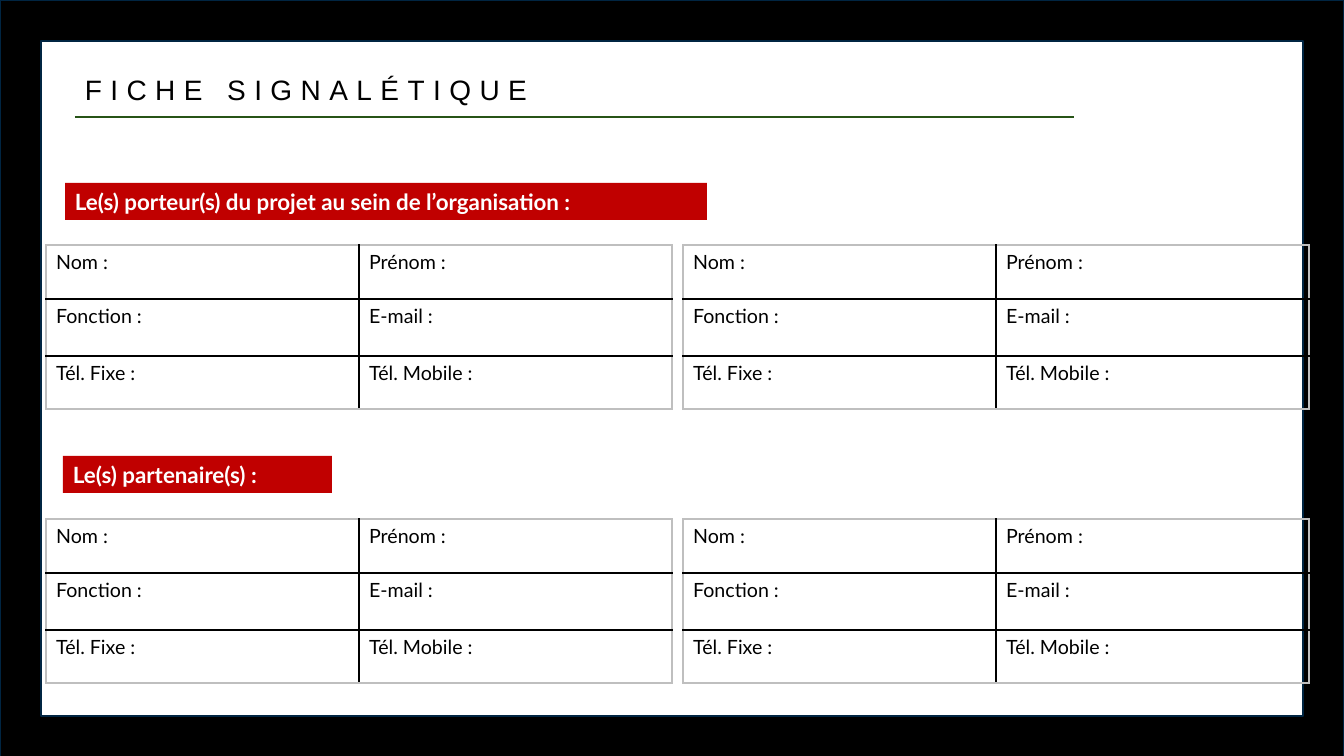
from lxml import etree
from pptx import Presentation
from pptx.dml.color import RGBColor
from pptx.enum.shapes import MSO_CONNECTOR, MSO_SHAPE
from pptx.enum.text import MSO_ANCHOR, MSO_AUTO_SIZE, PP_ALIGN
from pptx.oxml.ns import qn
from pptx.util import Pt

RECT, FRAME = MSO_SHAPE.RECTANGLE, MSO_SHAPE.FRAME
LINE = MSO_CONNECTOR.STRAIGHT
LEFT, CENTER = PP_ALIGN.LEFT, PP_ALIGN.CENTER
TOP = MSO_ANCHOR.TOP
GROW = MSO_AUTO_SIZE.SHAPE_TO_FIT_TEXT

BLACK = RGBColor(0x00, 0x00, 0x00)
WHITE = RGBColor(0xFF, 0xFF, 0xFF)
NAVY = RGBColor(0x00, 0x25, 0x42)
GREEN = RGBColor(0x27, 0x54, 0x17)
RED = RGBColor(0xC0, 0x00, 0x00)
GREY = RGBColor(0xBF, 0xBF, 0xBF)

WIDE, HIGH = 1344, 756
FIELDS = [
    ("Nom :", "Prénom :"),
    ("Fonction :", "E-mail :"),
    ("Tél. Fixe :", "Tél. Mobile :"),
]
ROWS = (54, 57, 53)
COL = 313
LEFTS = (46, 683)
PARTS = [
    ("Le(s) porteur(s) du projet au sein de l’organisation :", (65, 183, 642, 37), 245),
    ("Le(s) partenaire(s) :", (63, 456, 269, 37), 519),
]


def px(*nums):
    """Turn lengths in px into EMU."""
    return [round(n * 12192000 / WIDE) for n in nums]


def write(frame, text, size=14, face="Lato", color=BLACK, bold=False,
          align=LEFT, space=None, track=None):
    """Put formatted text in a text frame."""
    para = frame.paragraphs[0]
    para.alignment = align
    if space:
        para.line_spacing = space
    run = para.add_run()
    run.text = text
    font = run.font
    font.size, font.name, font.bold = Pt(size), face, bold
    font.color.rgb = color
    if track:
        run._r.get_or_add_rPr().set("spc", str(track * 100))


def add_box(slide, kind, box, fill):
    """Add a plain filled shape without a line."""
    shape = slide.shapes.add_shape(kind, *px(*box))
    shape.shadow.inherit = False
    shape.fill.solid()
    shape.fill.fore_color.rgb = fill
    shape.line.fill.background()
    return shape


def add_border(slide):
    """Add the black frame around the slide."""
    shape = add_box(slide, FRAME, (0, 0, WIDE, HIGH + 1), BLACK)
    shape.adjustments[0] = 0.054
    shape.line.color.rgb = NAVY
    shape.line.width = Pt(1.5)


def add_title(slide, text):
    """Add the spaced title and the rule under it."""
    frame = slide.shapes.add_textbox(*px(-222, 71, 1056, 91)).text_frame
    frame.word_wrap = True
    frame.vertical_anchor = TOP
    write(frame, text, size=20, face="Arial", align=CENTER, space=0.9, track=6)
    rule = slide.shapes.add_connector(LINE, *px(75, 117, 1074, 117))
    rule.line.color.rgb = GREEN
    rule.line.width = Pt(1.5)
    etree.SubElement(rule._element.spPr, qn("a:effectLst"))


def add_label(slide, text, box):
    """Add a red heading bar."""
    frame = add_box(slide, RECT, box, RED).text_frame
    frame.word_wrap = True
    frame.auto_size = GROW
    frame.vertical_anchor = TOP
    write(frame, text, size=16, color=WHITE, bold=True)


def set_edges(cell, edges):
    """Draw the cell borders, given as side and colour."""
    props = cell._tc.get_or_add_tcPr()
    for spot, (side, color) in enumerate(edges):
        line = etree.Element(qn("a:ln" + side), w=str(Pt(1)))
        fill = etree.SubElement(line, qn("a:solidFill"))
        etree.SubElement(fill, qn("a:srgbClr"), val=str(color))
        props.insert(spot, line)


def add_form(slide, left, top):
    """Add one contact table with grey outer and black inner borders."""
    rows, cols = len(FIELDS), len(FIELDS[0])
    shape = slide.shapes.add_table(rows, cols, *px(left, top, COL * cols, sum(ROWS)))
    table = shape.table
    table.first_row = table.horz_banding = False
    for col in table.columns:
        col.width = px(COL)[0]
    for r, names in enumerate(FIELDS):
        table.rows[r].height = px(ROWS[r])[0]
        for c, name in enumerate(names):
            cell = table.cell(r, c)
            cell.fill.background()
            write(cell.text_frame, name)
            outer = (("L", c == 0), ("R", c == cols - 1),
                     ("T", r == 0), ("B", r == rows - 1))
            set_edges(cell, [(side, GREY if out else BLACK) for side, out in outer])


def main():
    """Build and save the slide."""
    deck = Presentation()
    deck.slide_width, deck.slide_height = px(WIDE, HIGH)
    slide = deck.slides.add_slide(deck.slide_layouts[6])
    add_border(slide)
    add_title(slide, "FICHE SIGNALÉTIQUE")
    for text, box, top in PARTS:
        add_label(slide, text, box)
        for left in LEFTS:
            add_form(slide, left, top)
    deck.save("out.pptx")


if __name__ == "__main__":
    main()
